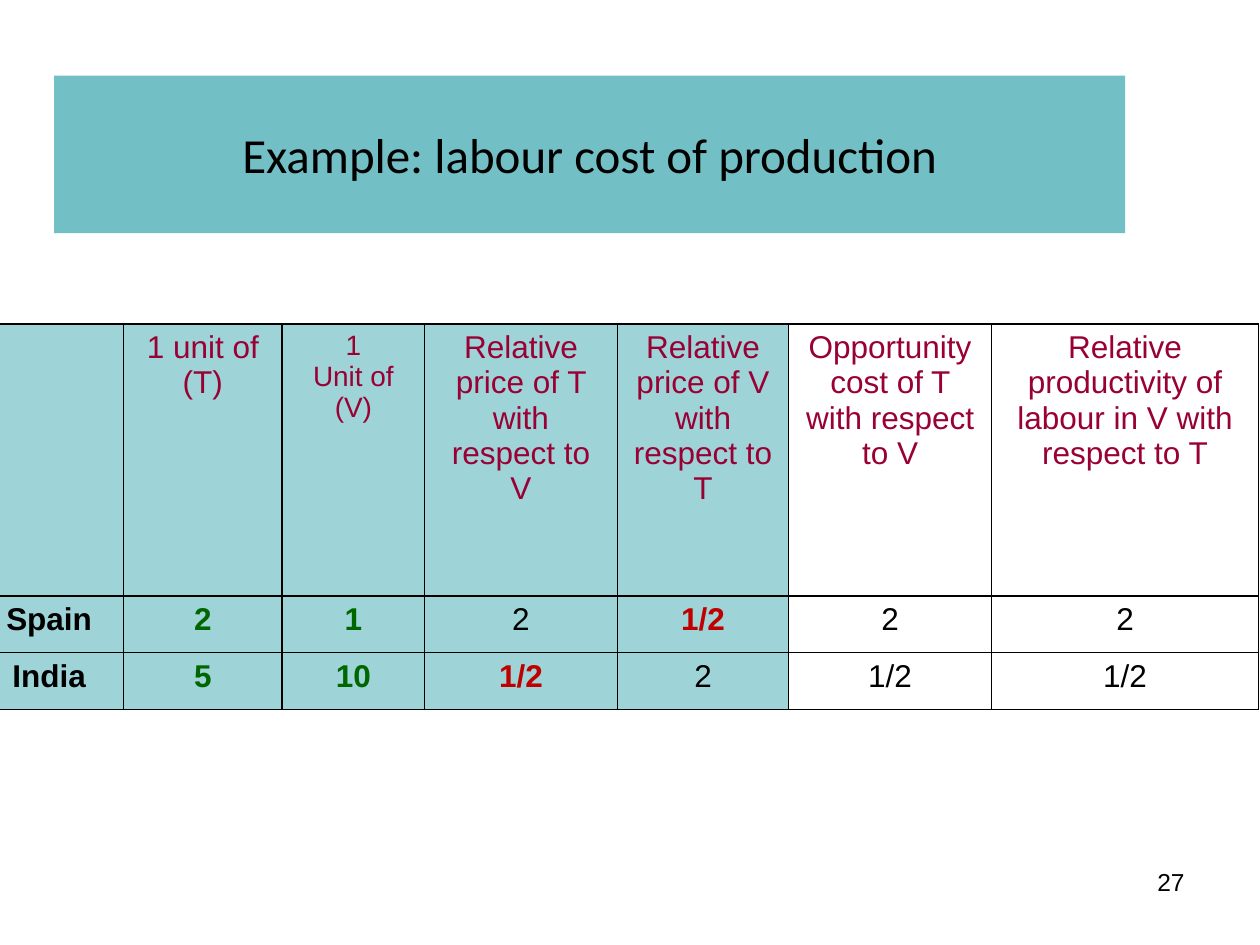
from lxml.etree import SubElement
from pptx import Presentation
from pptx.dml.color import RGBColor
from pptx.enum.text import MSO_ANCHOR, PP_ALIGN
from pptx.oxml.ns import qn
from pptx.util import Inches, Pt

BLACK, MAROON, GREEN, RED = "000000", "990033", "006600", "C00000"
TEAL, PALE_TEAL = "72BFC5", "9ED3D7"


def rgb(color):
    return RGBColor.from_string(color)


def add_text(p, text, size, color, font="Arial", bold=False, align=PP_ALIGN.CENTER):
    p.alignment = align
    r = p.add_run()
    r.text = text
    r.font.name, r.font.size, r.font.bold = font, Pt(size), bold
    r.font.color.rgb = rgb(color)


prs = Presentation()
prs.slide_width, prs.slide_height = Inches(10), Inches(7.5)
s = prs.slides.add_slide(prs.slide_layouts[5])

# Title banner
title = s.shapes.title
title.left, title.top = Inches(0.43), Inches(0.6)
title.width, title.height = Inches(8.5), Inches(1.25)
title.fill.solid()
title.fill.fore_color.rgb = rgb(TEAL)
title.text_frame.vertical_anchor = MSO_ANCHOR.MIDDLE
add_text(title.text_frame.paragraphs[0], "Example: labour cost of production",
         28, BLACK, "Calibri")

# Table contents: one list of lines per heading, one string per value
headings = [
    [],
    ["1 unit of", "(Τ)"],
    ["1", "Unit of", "(V)"],
    ["Relative price of T with respect to V"],
    ["Relative price of V with respect to T"],
    ["Opportunity cost of T with respect to V"],
    ["Relative productivity of labour in V with respect to T"],
]
countries = [
    ["Spain", "2", "1", "2", "1/2", "2", "2"],
    ["India", "5", "10", "1/2", "2", "1/2", "1/2"],
]
rows = [headings] + [[[value] for value in country] for country in countries]
col_widths = [1.18, 1.26, 1.13, 1.53, 1.36, 1.61, 2.12]
row_heights = [2.16, 0.45, 0.45]
shaded_cols = 5

# Table grid
table = s.shapes.add_table(len(rows), len(col_widths), Inches(-0.2), Inches(2.57),
                           Inches(sum(col_widths)), Inches(sum(row_heights))).table
table.first_row = table.horz_banding = False
for col, width in zip(table.columns, col_widths):
    col.width = Inches(width)
for row, height in zip(table.rows, row_heights):
    row.height = Inches(height)

# Table cells
for i, row in enumerate(rows):
    for j, lines in enumerate(row):
        cell = table.cell(i, j)

        # Borders go before the fill in the cell properties
        tcPr = cell._tc.get_or_add_tcPr()
        for side in ("a:lnL", "a:lnR", "a:lnT", "a:lnB"):
            ln = SubElement(tcPr, qn(side), w=str(Pt(1)))
            SubElement(SubElement(ln, qn("a:solidFill")), qn("a:srgbClr"), val=BLACK)
        if j < shaded_cols:
            cell.fill.solid()
            cell.fill.fore_color.rgb = rgb(PALE_TEAL)
        else:
            cell.fill.background()

        # Country names and labour costs are bold, as are the lower relative prices
        lower_price = j in (3, 4) and lines == ["1/2"]
        if i == 0:
            color = MAROON
        elif j in (1, 2):
            color = GREEN
        else:
            color = RED if lower_price else BLACK
        bold = i > 0 and (j < 3 or lower_price)
        size = 16 if (i, j) == (0, 2) else 18
        tf = cell.text_frame
        for n, line in enumerate(lines):
            p = tf.add_paragraph() if n else tf.paragraphs[0]
            add_text(p, line, size, color, bold=bold)

# Slide number
number = s.shapes.add_textbox(Inches(7.17), Inches(6.83), Inches(2.33), Inches(0.52))
number.text_frame.word_wrap = True
add_text(number.text_frame.paragraphs[0], "27", 14, BLACK, align=PP_ALIGN.RIGHT)

prs.save("out.pptx")
